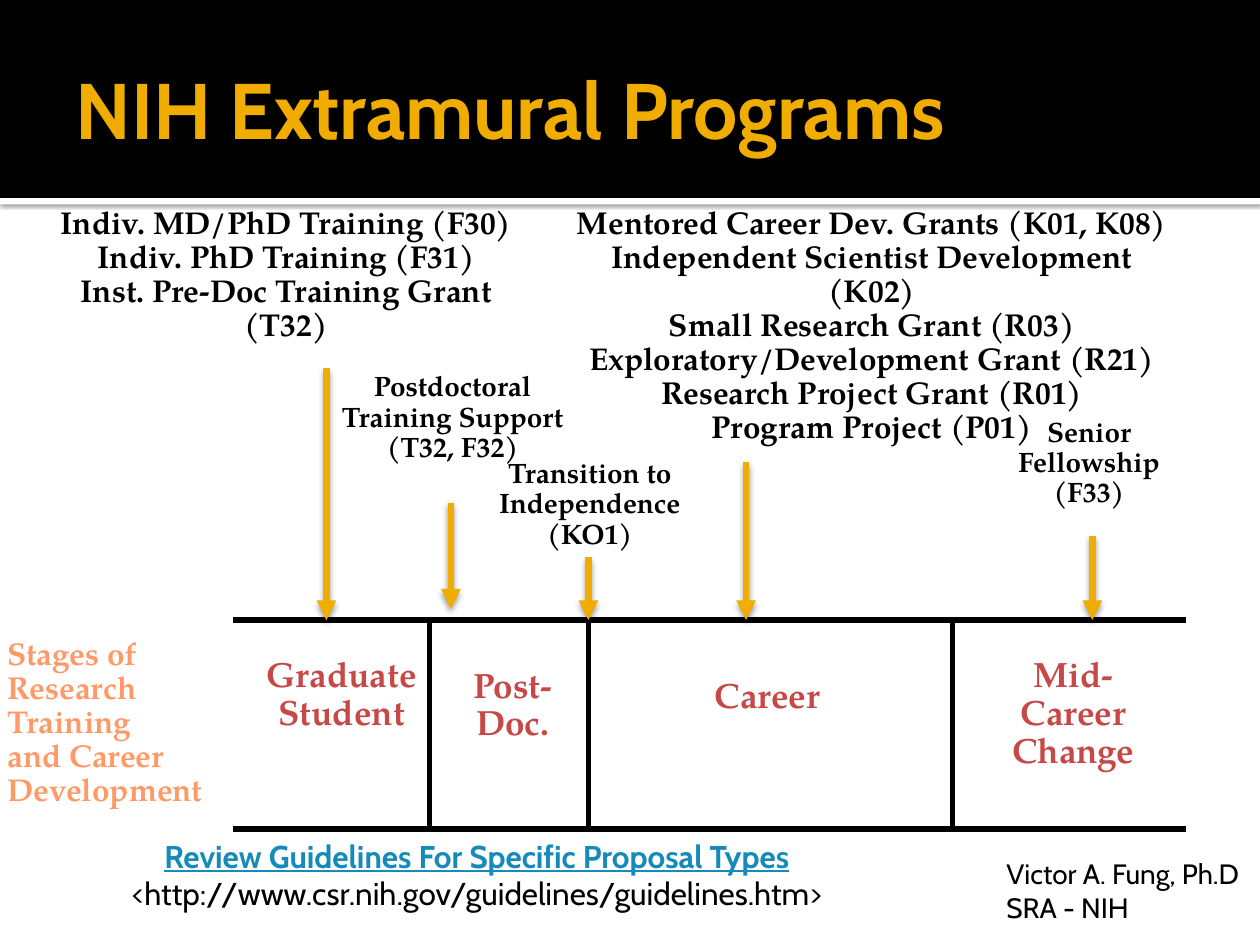
"""Build the slide of extramural programs along the stages of a research career."""
import pptx
import pptx.dml.color
import pptx.enum.shapes
import pptx.enum.text
import pptx.oxml
import pptx.oxml.ns
import pptx.util
from pptx.util import Cm, Pt

SERIF, SANS = "TeX Gyre Pagella", "Cabin"
BLACK, WHITE, GOLD = "000000", "FFFFFF", "F0AD00"
RED, ORANGE, BLUE = "C64847", "FF9966", "168BBA"
LEFT = pptx.enum.text.PP_ALIGN.LEFT
CENTER = pptx.enum.text.PP_ALIGN.CENTER

TITLE = "NIH Extramural Programs"
PROGRAMS = [
    ((0.69, 4.06, 10.16, 3.2), 18, [
        "Indiv. MD/PhD Training (F30)",
        "Indiv. PhD Training (F31)",
        "Inst. Pre-Doc Training Grant (T32)"]),
    ((11.35, 4.06, 12.45, 5.1), 18, [
        "Mentored Career Dev. Grants (K01, K08)",
        "Independent Scientist Development (K02)",
        "Small Research Grant (R03)",
        "Exploratory/Development Grant (R21)",
        "Research Project Grant (R01)",
        "Program Project (P01)"]),
    ((6.6, 7.39, 5.05, 2.11), 16, ["Postdoctoral", "Training Support", "(T32, F32)"]),
    ((9.78, 9.14, 4.22, 2.11), 16, ["Transition to", "Independence", "(KO1)"]),
    ((20.24, 8.31, 3.43, 2.11), 16, ["Senior", "Fellowship", "(F33)"]),
]
STAGES = [
    ((5.11, 13.13, 3.56, 1.8), ["Graduate", "Student"]),
    ((9.27, 13.34, 2.13, 1.8), ["Post-", "Doc."]),
    ((14.15, 13.54, 2.64, 1.04), ["Career"]),
    ((20.14, 13.13, 3, 2.57), ["Mid-", "Career", "Change"]),
]
STAGES_LABEL = ["Stages of", "Research Training", "and Career", "Development"]
CREDIT = ["Victor A. Fung, Ph.D", "SRA - NIH"]
GUIDELINES = ["Review Guidelines For Specific Proposal Types",
              "<http://www.csr.nih.gov/guidelines/guidelines.htm>"]

GRID_LEFT, GRID_RIGHT, GRID_TOP, GRID_BOTTOM = 4.7, 23.9, 12.5, 16.71
DIVIDERS = [8.66, 11.86, 19.2]
ARROWS = [(6.58, 7.42, GRID_TOP), (9.09, 10.13, 12.27), (11.86, 11.23, GRID_TOP),
          (15.04, 9.32, GRID_TOP), (22.02, 10.8, GRID_TOP)]


def color(value):
    return pptx.dml.color.RGBColor.from_string(value)


def set_effects(shape, blur=None, distance=None, opacity=None):
    namespace = pptx.oxml.ns.nsdecls("a")
    shadow = "" if blur is None else (
        f'<a:outerShdw blurRad="{Pt(blur)}" dist="{Pt(distance)}" dir="5400000" '
        f'rotWithShape="0"><a:srgbClr val="{BLACK}">'
        f'<a:alpha val="{opacity * 1000}"/></a:srgbClr></a:outerShdw>')
    properties = shape._element.spPr
    for old in properties.findall(pptx.oxml.ns.qn("a:effectLst")):
        properties.remove(old)
    properties.append(pptx.oxml.parse_xml(
        f"<a:effectLst {namespace}>{shadow}</a:effectLst>"))


def add_band(slide, top, height, fill):
    band = slide.shapes.add_shape(pptx.enum.shapes.MSO_SHAPE.RECTANGLE,
                                  0, Cm(top), Cm(25.4), Cm(height))
    band.shadow.inherit = False
    band.fill.solid()
    band.fill.fore_color.rgb = color(fill)
    band.line.fill.background()
    return band


def add_text(slide, box, lines, size, fill, font=SERIF, bold=True,
             align=CENTER, spacing=0.9, wrap=True):
    shape = slide.shapes.add_textbox(*map(Cm, box))
    frame = shape.text_frame
    frame.word_wrap = wrap
    frame.text = "\n".join(lines)
    for paragraph in frame.paragraphs:
        paragraph.alignment = align
        paragraph.line_spacing = spacing
        paragraph.font.name = font
        paragraph.font.size = Pt(size)
        paragraph.font.bold = bold
        paragraph.font.color.rgb = color(fill)
    return frame


def add_line(slide, start, end, fill=BLACK, width=3):
    line = slide.shapes.add_connector(pptx.enum.shapes.MSO_CONNECTOR.STRAIGHT,
                                      *map(Cm, start + end))
    line.line.color.rgb = color(fill)
    line.line.width = Pt(width)
    set_effects(line)
    return line


def add_arrow(slide, x, top, bottom):
    arrow = add_line(slide, (x, top), (x, bottom), GOLD, 3.78)
    namespace = pptx.oxml.ns.nsdecls("a")
    arrow.line._get_or_add_ln().append(
        pptx.oxml.parse_xml(f'<a:tailEnd {namespace} type="triangle"/>'))
    set_effects(arrow, 3.5, 2, 38)


def main():
    presentation = pptx.Presentation()
    presentation.slide_width, presentation.slide_height = Cm(25.4), Cm(19.05)
    slide = presentation.slides.add_slide(presentation.slide_layouts[6])

    set_effects(add_band(slide, 3.99, 0.13, WHITE), 2.5, 0.8, 60)
    add_band(slide, 0, 3.99, BLACK)
    title = add_text(slide, (1.27, 0.43, 22.86, 3.48), [TITLE], 45, GOLD, SANS,
                     align=LEFT, spacing=1)
    title.vertical_anchor = pptx.enum.text.MSO_ANCHOR.MIDDLE

    for y in (GRID_TOP, GRID_BOTTOM):
        add_line(slide, (GRID_LEFT, y), (GRID_RIGHT, y))
    for x in DIVIDERS:
        add_line(slide, (x, GRID_TOP), (x, GRID_BOTTOM))

    for box, size, lines in PROGRAMS:
        add_text(slide, box, lines, size, BLACK, wrap=size == 18)
    for box, lines in STAGES:
        add_text(slide, box, lines, 20, RED, wrap=False)
    add_text(slide, (-0.1, 12.75, 4.8, 3.73), STAGES_LABEL, 18, ORANGE, align=LEFT)
    for arrow in ARROWS:
        add_arrow(slide, *arrow)

    add_text(slide, (20.04, 17.15, 5.36, 1.63), CREDIT, 16, BLACK, SANS, False,
             LEFT, 1, False)
    guidelines = add_text(slide, (0.38, 16.74, 18.47, 1.8), GUIDELINES, 18, BLACK,
                          SANS, False, spacing=1)
    heading = guidelines.paragraphs[0].font
    heading.bold = heading.underline = True
    heading.color.rgb = color(BLUE)

    presentation.save("out.pptx")


if __name__ == "__main__":
    main()
